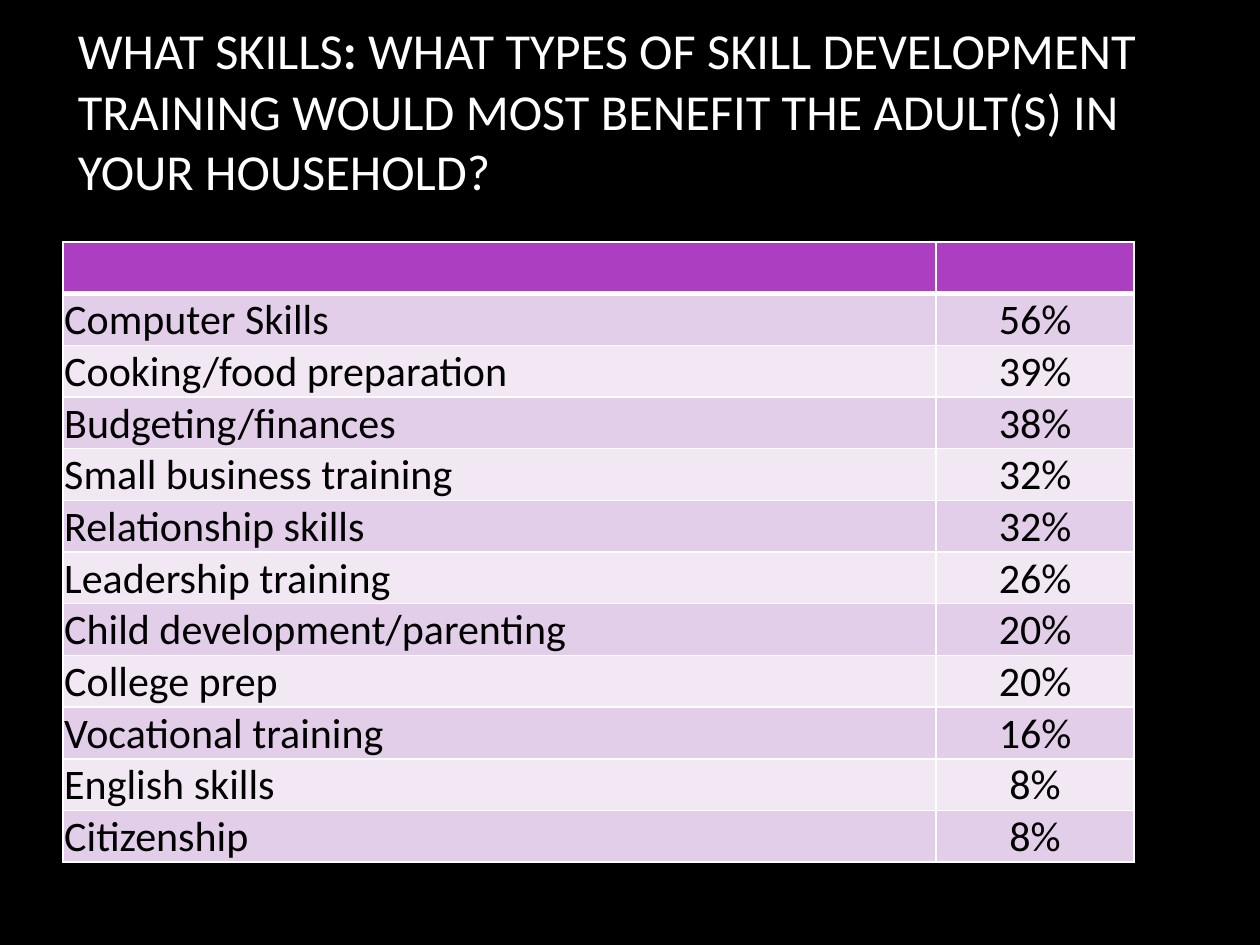
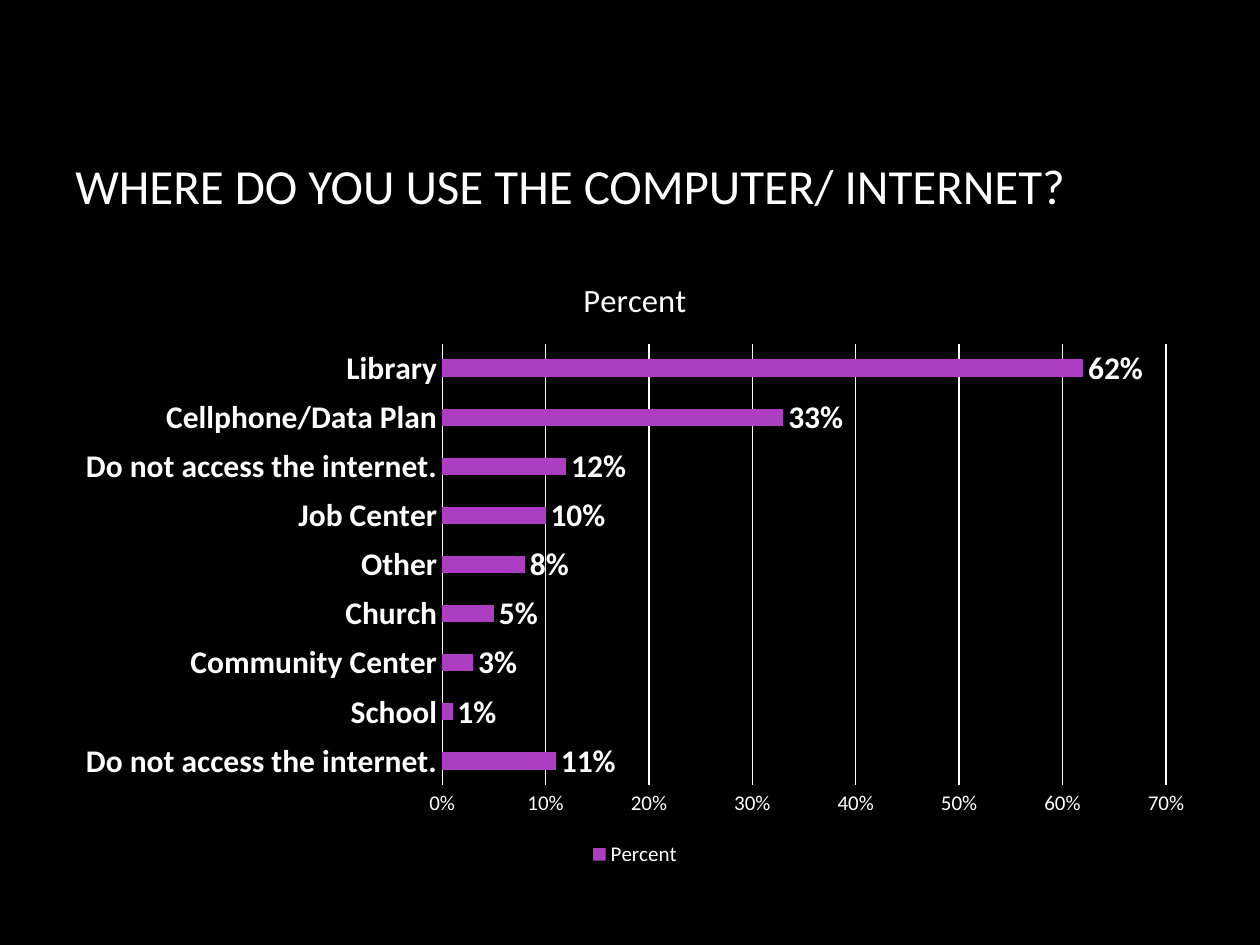
from dataclasses import dataclass

from lxml.etree import SubElement
from pptx import Presentation
from pptx.chart.data import CategoryChartData
from pptx.dml.color import RGBColor
from pptx.enum.chart import XL_CHART_TYPE, XL_LABEL_POSITION, XL_LEGEND_POSITION, XL_TICK_MARK
from pptx.enum.text import MSO_ANCHOR, PP_ALIGN
from pptx.oxml.ns import qn
from pptx.slide import Slide
from pptx.table import _Cell
from pptx.text.text import Font
from pptx.util import Inches, Pt


@dataclass(frozen=True)
class Theme:
    font: str = "Calibri"
    black: str = "000000"
    white: str = "FFFFFF"
    purple: str = "AC3EC1"
    bands: tuple[str, str] = ("E3CEE9", "F1E8F4")
    cell_size: float = 24
    chart_title_size: float = 18.6
    label_size: float = 18
    axis_size: float = 12
    grid_width: float = 0.75
    border: float = 1
    header_border: float = 3


@dataclass(frozen=True)
class Box:
    left: float
    top: float
    width: float
    height: float

    def lengths(self) -> tuple[Inches, ...]:
        return tuple(Inches(v) for v in (self.left, self.top, self.width, self.height))


@dataclass(frozen=True)
class TitleRun:
    text: str
    bold: bool = False


@dataclass(frozen=True)
class Answer:
    label: str
    share: float


THEME = Theme()

SKILLS = [
    Answer("Computer Skills", 0.56),
    Answer("Cooking/food preparation", 0.39),
    Answer("Budgeting/finances", 0.38),
    Answer("Small business training", 0.32),
    Answer("Relationship skills", 0.32),
    Answer("Leadership training", 0.26),
    Answer("Child development/parenting", 0.20),
    Answer("College prep", 0.20),
    Answer("Vocational training", 0.16),
    Answer("English skills", 0.08),
    Answer("Citizenship", 0.08),
]

# Bar charts draw their categories from the bottom up
PLACES = [
    Answer("Do not access the internet.", 0.11),
    Answer("School", 0.01),
    Answer("Community Center", 0.03),
    Answer("Church", 0.05),
    Answer("Other", 0.08),
    Answer("Job Center", 0.10),
    Answer("Do not access the internet.", 0.12),
    Answer("Cellphone/Data Plan", 0.33),
    Answer("Library", 0.62),
]


def rgb(color: str) -> RGBColor:
    return RGBColor.from_string(color)


def style_font(font: Font, size: float, color: str = THEME.white, bold: bool = False) -> None:
    font.name = THEME.font
    font.size = Pt(size)
    font.bold = bold
    font.color.rgb = rgb(color)


# Shared slide parts
def add_titled_slide(prs: Presentation, box: Box, size: float, runs: list[TitleRun]) -> Slide:
    s = prs.slides.add_slide(prs.slide_layouts[6])
    s.background.fill.solid()
    s.background.fill.fore_color.rgb = rgb(THEME.black)
    tf = s.shapes.add_textbox(*box.lengths()).text_frame
    tf.word_wrap = True
    tf.vertical_anchor = MSO_ANCHOR.MIDDLE
    p = tf.paragraphs[0]
    for run in runs:
        r = p.add_run()
        r.text = run.text
        style_font(r.font, size, bold=run.bold)
    return s


# Table
def style_cell(cell: _Cell, fill: str, top: float, bottom: float) -> None:
    tc_pr = cell._tc.get_or_add_tcPr()
    widths = {"a:lnL": THEME.border, "a:lnR": THEME.border, "a:lnT": top, "a:lnB": bottom}
    for tag, width in widths.items():
        ln = SubElement(tc_pr, qn(tag), w=str(Pt(width)))
        SubElement(SubElement(ln, qn("a:solidFill")), qn("a:srgbClr"), val=THEME.white)
    cell.fill.solid()
    cell.fill.fore_color.rgb = rgb(fill)


def fill_cell(cell: _Cell, text: str, anchor: MSO_ANCHOR, align: PP_ALIGN) -> None:
    cell.margin_left = cell.margin_right = cell.margin_top = Inches(0.01)
    cell.margin_bottom = Inches(0)
    cell.vertical_anchor = anchor
    p = cell.text_frame.paragraphs[0]
    p.alignment = align
    r = p.add_run()
    r.text = text
    style_font(r.font, THEME.cell_size, THEME.black)


def add_answer_table(s: Slide, box: Box, col_widths: list[float], answers: list[Answer]) -> None:
    table = s.shapes.add_table(len(answers) + 1, len(col_widths), *box.lengths()).table
    for column, width in zip(table.columns, col_widths):
        column.width = Inches(width)
    for cell in table.rows[0].cells:
        style_cell(cell, THEME.purple, THEME.border, THEME.header_border)
    for i, answer in enumerate(answers):
        label, share = table.rows[i + 1].cells
        for cell in (label, share):
            top = THEME.border if i else THEME.header_border
            style_cell(cell, THEME.bands[i % 2], top, THEME.border)
        fill_cell(label, answer.label, MSO_ANCHOR.MIDDLE, PP_ALIGN.LEFT)
        fill_cell(share, f"{answer.share:.0%}", MSO_ANCHOR.BOTTOM, PP_ALIGN.CENTER)


# Chart
def add_answer_chart(s: Slide, box: Box, name: str, answers: list[Answer]) -> None:
    data = CategoryChartData(number_format="0%")
    data.categories = [a.label for a in answers]
    data.add_series(name, [a.share for a in answers])
    chart = s.shapes.add_chart(XL_CHART_TYPE.BAR_CLUSTERED, *box.lengths(), data).chart
    style_font(chart.font, THEME.axis_size)

    chart.has_title = True
    r = chart.chart_title.text_frame.paragraphs[0].add_run()
    r.text = name
    style_font(r.font, THEME.chart_title_size)
    chart.chart_title.include_in_layout = False

    chart.has_legend = True
    chart.legend.position = XL_LEGEND_POSITION.BOTTOM
    chart.legend.include_in_layout = False
    style_font(chart.legend.font, THEME.axis_size)

    places, shares = chart.category_axis, chart.value_axis
    for axis in (places, shares):
        axis.major_tick_mark = axis.minor_tick_mark = XL_TICK_MARK.NONE
    style_font(places.tick_labels.font, THEME.label_size, bold=True)
    style_font(shares.tick_labels.font, THEME.axis_size)
    shares.tick_labels.number_format = "0%"
    shares.tick_labels.number_format_is_linked = False
    shares.minimum_scale, shares.maximum_scale, shares.major_unit = 0, 0.7, 0.1
    shares.format.line.fill.background()
    shares.has_major_gridlines = True
    for line in (places.format.line, shares.major_gridlines.format.line):
        line.color.rgb = rgb(THEME.white)
        line.width = Pt(THEME.grid_width)

    plot = chart.plots[0]
    plot.gap_width = 182
    plot.vary_by_categories = False
    bars = plot.series[0]
    bars.format.fill.solid()
    bars.format.fill.fore_color.rgb = rgb(THEME.purple)
    labels = bars.data_labels
    labels.show_value = True
    labels.number_format = "0%"
    labels.number_format_is_linked = False
    labels.position = XL_LABEL_POSITION.OUTSIDE_END
    style_font(labels.font, THEME.label_size, bold=True)


def main() -> None:
    prs = Presentation()
    prs.slide_width, prs.slide_height = Inches(10), Inches(7.5)

    # Slide 1: skills
    skills = add_titled_slide(prs, Box(0.52, 0.04, 9, 1.67), 28.8, [
        TitleRun("WHAT SKILLS"),
        TitleRun(": ", bold=True),
        TitleRun("WHAT TYPES OF SKILL DEVELOPMENT TRAINING WOULD MOST BENEFIT "
                 "THE ADULT(S) IN YOUR HOUSEHOLD?"),
    ])
    add_answer_table(skills, Box(0.5, 1.92, 8.5, 4.92), [6.93, 1.57], SKILLS)

    # Slide 2: places of use
    places = add_titled_slide(prs, Box(0.5, 0.67, 8.5, 1.59), 28, [
        TitleRun("WHERE DO YOU USE THE COMPUTER/ INTERNET?"),
    ])
    add_answer_chart(places, Box(0.5, 2, 9.08, 4.92), "Percent", PLACES)

    prs.save("out.pptx")


if __name__ == "__main__":
    main()
